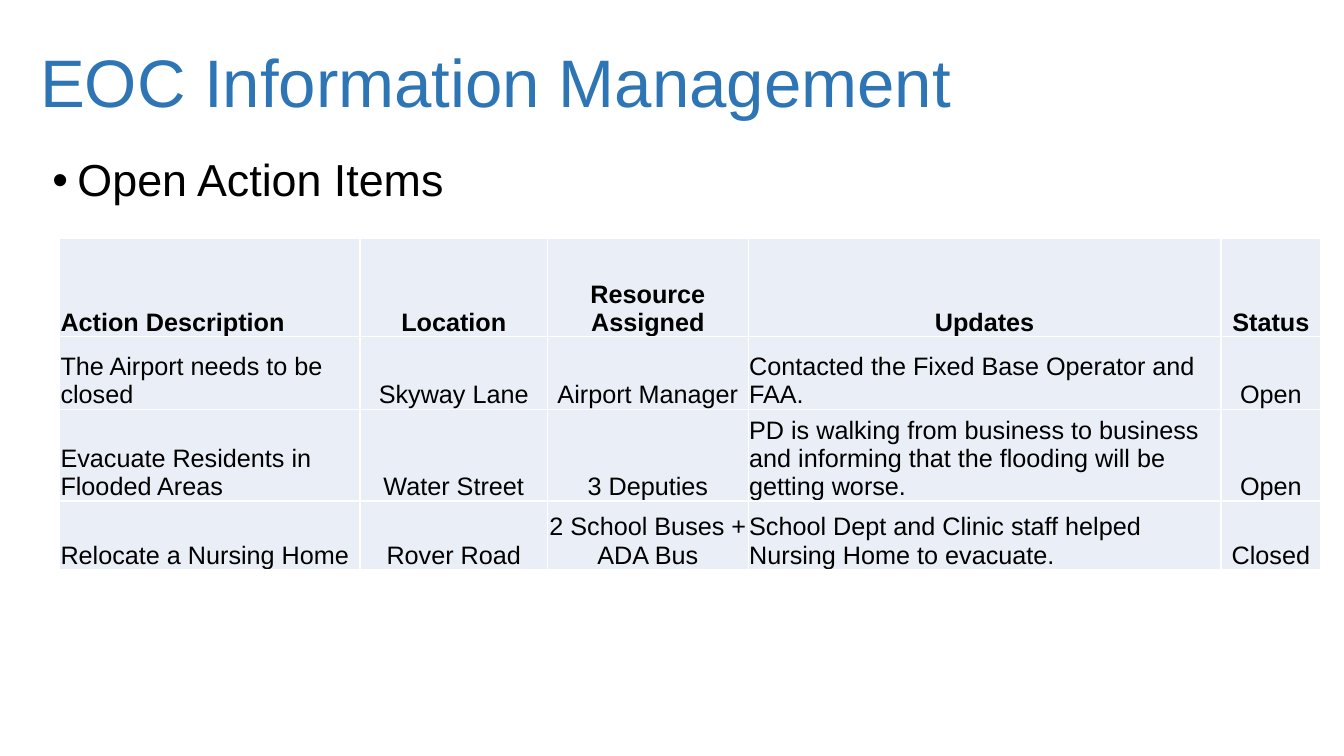
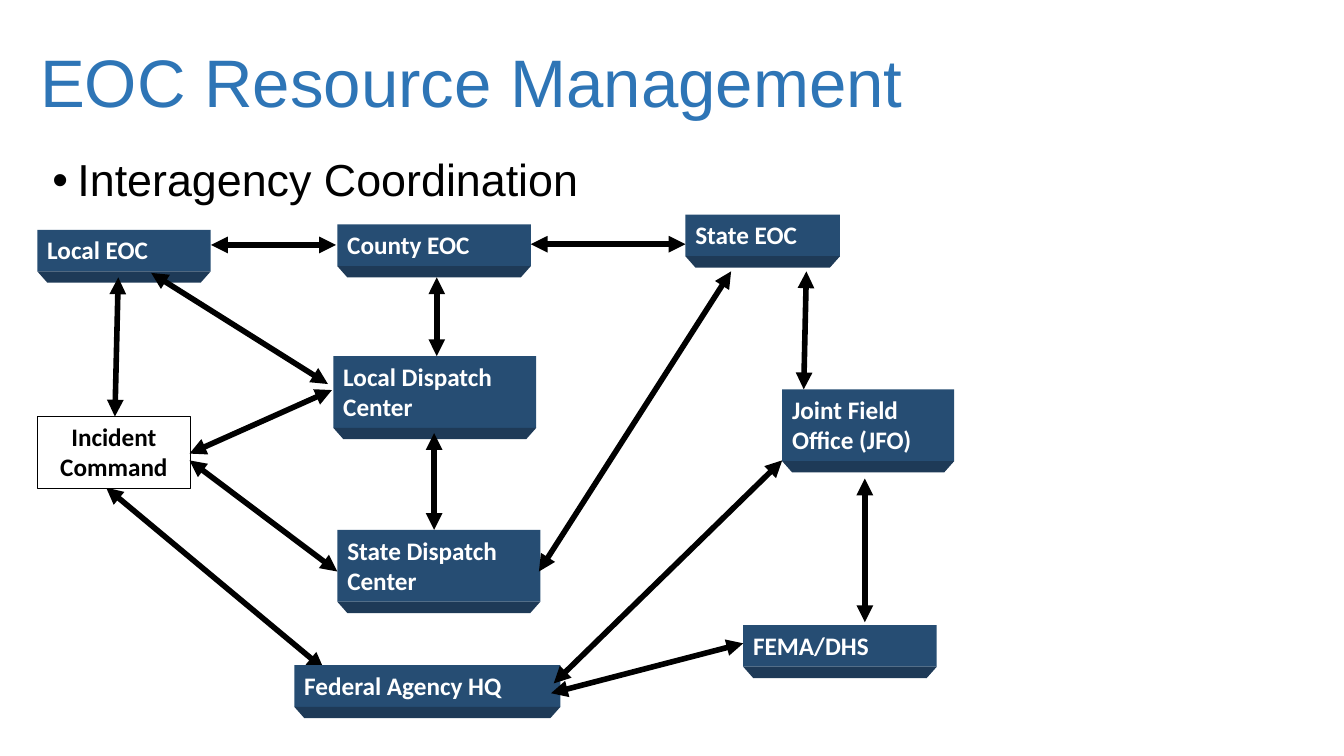
from lxml import etree
from pptx import Presentation
from pptx import util as u
from pptx.dml.color import RGBColor
from pptx.enum import shapes, text
from pptx.oxml import ns

TITLE_BLUE = RGBColor(0x2E, 0x75, 0xB6)
BLACK = RGBColor(0x00, 0x00, 0x00)
WHITE = RGBColor(0xFF, 0xFF, 0xFF)
CELL_TINT = RGBColor(0xEA, 0xEF, 0xF7)
BLOCK_FRONT = RGBColor(0x26, 0x4D, 0x73)
BLOCK_UNDERSIDE = RGBColor(0x1E, 0x3A, 0x57)

SLIDE_WIDTH, SLIDE_HEIGHT = u.Inches(13.33), u.Inches(7.5)
LEFT, CENTER = text.PP_ALIGN.LEFT, text.PP_ALIGN.CENTER

# All places and sizes are percentages of the slide's width and height.
COLUMN_SHARES = [22.36, 13.95, 14.93, 35.18, 7.43]
COLUMN_ALIGNS = [LEFT, CENTER, CENTER, LEFT, CENTER]
ROW_SHARES = [12.93, 9.6, 9.2, 9.07]
ACTION_ITEMS = [
    ["Action Description", "Location", "Resource Assigned", "Updates", "Status"],
    ["The Airport needs to be closed", "Skyway Lane", "Airport Manager",
     "Contacted the Fixed Base Operator and FAA.", "Open"],
    ["Evacuate Residents in Flooded Areas", "Water Street", "3 Deputies",
     "PD is walking from business to business and informing that the "
     "flooding will be getting worse.", "Open"],
    ["Relocate a Nursing Home", "Rover Road", "2 School Buses + ADA Bus",
     "School Dept and Clinic staff helped Nursing Home to evacuate.", "Closed"],
]

ONE_LINE, TWO_LINES = 5.5, 9.5
EDGE_DEPTH, EDGE_INSET = 1.5, 0.75
AGENCIES = [  # label, left, top, width, height
    ("Local EOC", 2.78, 30.4, 12.9, ONE_LINE),
    ("County EOC", 25.1, 29.7, 14.4, ONE_LINE),
    ("State EOC", 51, 28.4, 11.5, ONE_LINE),
    ("Joint Field\nOffice (JFO)", 58.2, 51.5, 12.8, TWO_LINES),
    ("FEMA/DHS", 55.3, 82.7, 14.4, ONE_LINE),
    ("Local Dispatch Center", 24.8, 47.1, 15.1, TWO_LINES),
    ("State Dispatch Center", 25.1, 70.1, 15.1, TWO_LINES),
    ("Federal Agency HQ", 21.9, 88, 19.8, ONE_LINE),
]
INCIDENT_TO_FEDERAL = (24.1, 88.5, 7.9, 64.5)
LINKS = [  # start across, start down, end across, end down
    (8.55, 55.1, 8.8, 36.7),
    (14.1, 60, 24.7, 51.6),
    (15.7, 32.4, 25, 32.4),
    (39.5, 32.3, 51, 32.3),
    (32.5, 47.1, 32.5, 36.7),
    (59.8, 51.5, 60, 35.9),
    (64.35, 82.3, 64.35, 63.3),
    (32.3, 70.1, 32.3, 57.3),
    (25.1, 75.6, 14.1, 60.9),
    (40.1, 75.6, 54.4, 35.9),
    (24.4, 50.8, 11.25, 36.1),
    (41.2, 90.4, 58.2, 60.9),
    (41, 91.7, 55.3, 85.1),
]


def across(share):
    return u.Emu(round(SLIDE_WIDTH * share / 100))


def down(share):
    return u.Emu(round(SLIDE_HEIGHT * share / 100))


def area(left, top, width, height):
    return across(left), down(top), across(width), down(height)


def write(frame, wording, font, size, color, bold=False, align=LEFT):
    """Fill a text frame, one paragraph for each line of the wording."""
    frame.word_wrap = True
    frame.text = wording
    for para in frame.paragraphs:
        para.alignment = align
        para.font.name, para.font.size = font, u.Pt(size)
        para.font.color.rgb, para.font.bold = color, bold


def add_bullet(para):
    props = para._p.get_or_add_pPr()
    indent = u.Inches(0.25)
    props.set("marL", str(indent))
    props.set("indent", str(-indent))
    etree.SubElement(props, ns.qn("a:buFont"), typeface="Arial")
    etree.SubElement(props, ns.qn("a:buChar"), char="•")


def add_page(deck, title, topic):
    """Add a slide with the shared title and bulleted topic line."""
    page = deck.slides.add_slide(deck.slide_layouts[6])
    heading = page.shapes.add_textbox(*area(2.25, 4.27, 96.1, 14.13)).text_frame
    write(heading, title, "Arial", 48, TITLE_BLUE)
    heading.vertical_anchor = text.MSO_ANCHOR.MIDDLE
    heading.paragraphs[0].line_spacing = 0.9

    body = page.shapes.add_textbox(*area(3.15, 20.27, 93.7, 11.33)).text_frame
    write(body, topic, "Arial", 32, BLACK)
    para = body.paragraphs[0]
    para.line_spacing, para.space_before = 0.9, u.Pt(10)
    add_bullet(para)
    return page


def set_borders(cell, color, width):
    props = cell._tc.get_or_add_tcPr()
    for side in ("lnL", "lnR", "lnT", "lnB"):
        line = etree.SubElement(props, ns.qn("a:" + side), w=str(u.Pt(width)))
        fill = etree.SubElement(line, ns.qn("a:solidFill"))
        etree.SubElement(fill, ns.qn("a:srgbClr"), val=str(color))


def style_cell(cell, wording, bold, align):
    set_borders(cell, WHITE, 1)
    cell.fill.solid()
    cell.fill.fore_color.rgb = CELL_TINT
    cell.margin_left = cell.margin_right = cell.margin_top = u.Inches(0.01)
    cell.margin_bottom = 0
    cell.vertical_anchor = text.MSO_ANCHOR.BOTTOM
    write(cell.text_frame, wording, "Arial", 18, BLACK, bold, align)


def add_action_table(page):
    place = area(4.43, 31.6, sum(COLUMN_SHARES), sum(ROW_SHARES))
    table = page.shapes.add_table(len(ROW_SHARES), len(COLUMN_SHARES), *place).table
    for column, share in zip(table.columns, COLUMN_SHARES):
        column.width = across(share)
    for row, share in zip(table.rows, ROW_SHARES):
        row.height = down(share)
    for r, item in enumerate(ACTION_ITEMS):
        header = r == 0
        for c, wording in enumerate(item):
            align = CENTER if header and c else COLUMN_ALIGNS[c]
            style_cell(table.cell(r, c), wording, header, align)


def paint(shape, fill, line=None):
    shape.shadow.inherit = False
    shape.fill.solid()
    shape.fill.fore_color.rgb = fill
    if line is None:
        shape.line.fill.background()
    else:
        shape.line.color.rgb = line
        shape.line.width = u.Pt(0.75)


def add_box(page, wording, place, fill, color, line=None, align=LEFT):
    box = page.shapes.add_shape(shapes.MSO_SHAPE.RECTANGLE, *area(*place))
    paint(box, fill, line)
    box.text_frame.vertical_anchor = text.MSO_ANCHOR.TOP
    write(box.text_frame, wording, "Calibri", 18, color, True, align)


def add_agency(page, wording, left, top, width, height):
    """Add a block whose underside shows as a darker, narrowing edge."""
    add_box(page, wording, (left, top, width, height), BLOCK_FRONT, WHITE)
    right, bottom = left + width, top + height
    low = bottom + EDGE_DEPTH
    outline = page.shapes.build_freeform(across(left), down(bottom))
    corners = [(right, bottom), (right - EDGE_INSET, low), (left + EDGE_INSET, low)]
    outline.add_line_segments([(across(x), down(y)) for x, y in corners])
    paint(outline.convert_to_shape(), BLOCK_UNDERSIDE)


def add_link(page, x1, y1, x2, y2):
    """Add a thick line with an arrowhead at both ends."""
    link = page.shapes.add_connector(
        shapes.MSO_CONNECTOR.STRAIGHT, across(x1), down(y1), across(x2), down(y2))
    link.line.color.rgb = BLACK
    link.line.width = u.Pt(4)
    props = link._element.spPr
    line = props.find(ns.qn("a:ln"))
    for end in ("headEnd", "tailEnd"):
        etree.SubElement(line, ns.qn("a:" + end), type="triangle")
    etree.SubElement(props, ns.qn("a:effectLst"))


def add_coordination_map(page):
    add_link(page, *INCIDENT_TO_FEDERAL)
    for agency in AGENCIES:
        add_agency(page, *agency)
    add_box(page, "Incident\nCommand", (2.78, 55.1, 11.4, TWO_LINES),
            WHITE, BLACK, line=BLACK, align=CENTER)
    for link in LINKS:
        add_link(page, *link)


def main():
    deck = Presentation()
    deck.slide_width, deck.slide_height = SLIDE_WIDTH, SLIDE_HEIGHT
    add_action_table(add_page(deck, "EOC Information Management", "Open Action Items"))
    add_coordination_map(
        add_page(deck, "EOC Resource Management", "Interagency Coordination"))
    deck.save("out.pptx")


if __name__ == "__main__":
    main()
